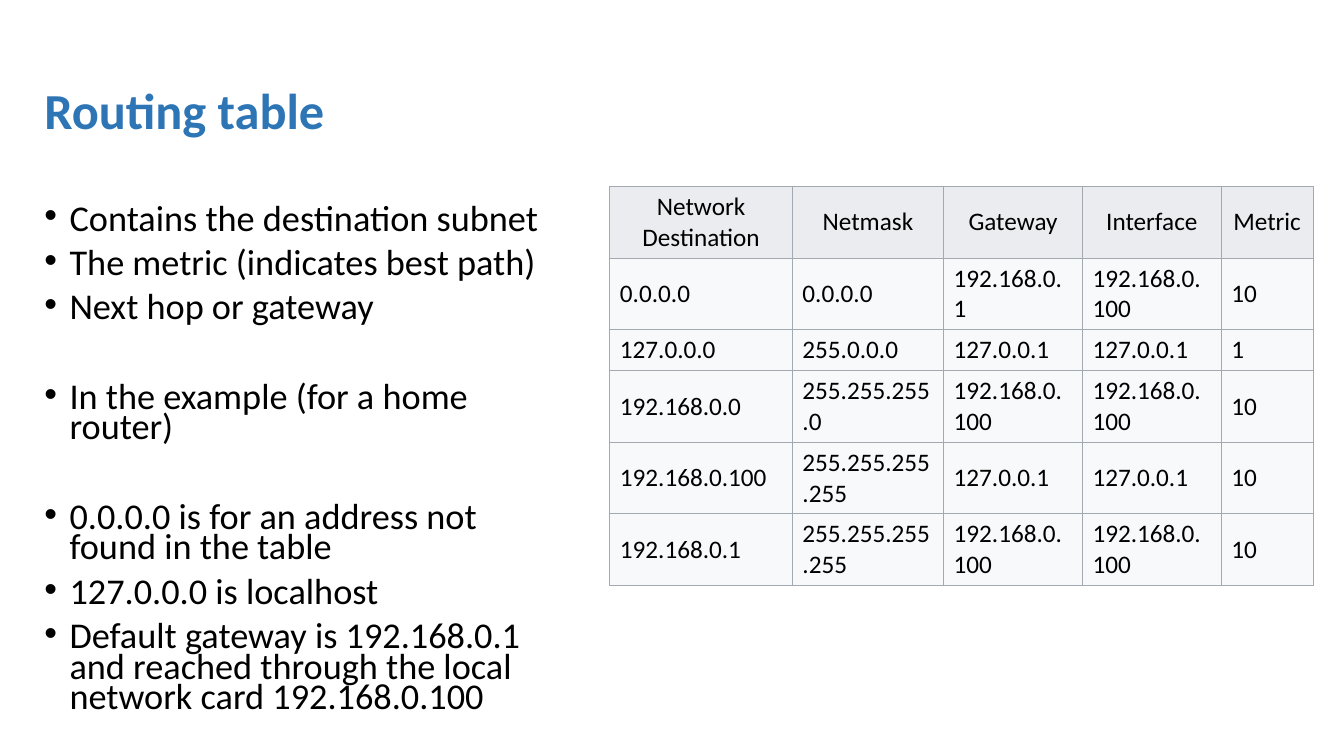
from dataclasses import dataclass

from lxml.etree import SubElement
from pptx import Presentation
from pptx.dml.color import RGBColor as Rgb
from pptx.enum.text import MSO_ANCHOR as Anchor, MSO_AUTO_SIZE as Fit, PP_ALIGN as Align
from pptx.oxml.ns import qn
from pptx.util import Pt

HEX = {
    "title": "2E75B6",
    "text": "000000",
    "head": "EAECF0",
    "cell": "F8F9FA",
    "line": "A2A9B1",
}
FACE = "Calibri"
NEAR, FAR = 10, 42.1  # space before an item, and before a new group


@dataclass
class Item:
    text: str
    gap: float = NEAR


@dataclass
class Col:
    name: str
    width: float
    cells: list[str]


ITEMS = [
    Item("Contains the destination subnet", 0),
    Item("The metric (indicates best path)"),
    Item("Next hop or gateway"),
    Item("In the example (for a home router)", FAR),
    Item("0.0.0.0 is for an address not found in the table", FAR),
    Item("127.0.0.0 is localhost"),
    Item("Default gateway is 192.168.0.1 and reached through "
         "the local network card 192.168.0.100"),
]
LOCAL, CARD, ROUTER = "127.0.0.1", "192.168.0.100", "192.168.0.1"
COLS = [
    Col("Network Destination", 130.4,
        ["0.0.0.0", "127.0.0.0", "192.168.0.0", CARD, ROUTER]),
    Col("Netmask", 108,
        ["0.0.0.0", "255.0.0.0", "255.255.255.0", "255.255.255.255", "255.255.255.255"]),
    Col("Gateway", 99.2, [ROUTER, LOCAL, CARD, LOCAL, CARD]),
    Col("Interface", 99.2, [CARD, LOCAL, CARD, LOCAL, CARD]),
    Col("Metric", 65.5, ["10", "1", "10", "10", "10"]),
]
ROWS = [50.4, 50.4, 29, 50.4, 50.4, 50.4]


def write(para, text: str, *, size: float, color: str = "text", bold: bool = False,
          align=Align.LEFT, lead: float = 1, gap: float = 0) -> None:
    para.alignment = align
    para.line_spacing = lead
    para.space_before = Pt(gap)
    run = para.add_run()
    run.text = text
    font = run.font
    font.name, font.size, font.bold = FACE, Pt(size), bold
    font.color.rgb = Rgb.from_string(HEX[color])


def place(shape, left: float, top: float, width: float, height: float, anchor) -> None:
    shape.left, shape.top = Pt(left), Pt(top)
    shape.width, shape.height = Pt(width), Pt(height)
    frame = shape.text_frame
    frame.word_wrap = True
    frame.auto_size = Fit.NONE
    frame.vertical_anchor = anchor


def bullet(para, indent: float) -> None:
    props = para._p.get_or_add_pPr()
    props.set("marL", str(Pt(indent)))
    props.set("indent", str(-Pt(indent)))
    SubElement(props, qn("a:buFont"), typeface="Arial")
    SubElement(props, qn("a:buChar"), char="•")


def border(cell) -> None:
    """Line all four sides; the lines must come before the cell's fill."""
    props = cell._tc.get_or_add_tcPr()
    for side in ("lnL", "lnR", "lnT", "lnB"):
        line = SubElement(props, qn(f"a:{side}"), w=str(Pt(0.75)))
        fill = SubElement(line, qn("a:solidFill"))
        SubElement(fill, qn("a:srgbClr"), val=HEX["line"])


def draw_list(body) -> None:
    frame = body.text_frame
    for i, item in enumerate(ITEMS):
        para = frame.add_paragraph() if i else frame.paragraphs[0]
        bullet(para, 18)
        write(para, item.text, size=25.9, lead=0.7, gap=item.gap)


def draw_table(slide) -> None:
    width = sum(col.width for col in COLS)
    table = slide.shapes.add_table(len(ROWS), len(COLS), Pt(435.6), Pt(133.2),
                                   Pt(width), Pt(sum(ROWS))).table
    table.horz_banding = False
    for row, height in zip(table.rows, ROWS):
        row.height = Pt(height)
    for x, col in enumerate(COLS):
        table.columns[x].width = Pt(col.width)
        for y, text in enumerate([col.name, *col.cells]):
            cell = table.cell(y, x)
            cell.vertical_anchor = Anchor.MIDDLE
            border(cell)
            cell.fill.solid()
            cell.fill.fore_color.rgb = Rgb.from_string(HEX["cell" if y else "head"])
            write(cell.text_frame.paragraphs[0], text, size=18,
                  align=Align.LEFT if y else Align.CENTER)


def main() -> None:
    deck = Presentation()
    deck.slide_width, deck.slide_height = Pt(960), Pt(540)
    slide = deck.slides.add_slide(deck.slide_layouts[1])
    title, body = slide.placeholders
    place(title, 24.5, 28.8, 913, 104.4, Anchor.MIDDLE)
    write(title.text_frame.paragraphs[0], "Routing table", size=36,
          color="title", bold=True, lead=0.9)
    place(body, 24.5, 144, 390.2, 388.8, Anchor.TOP)
    draw_list(body)
    draw_table(slide)
    deck.save("out.pptx")


if __name__ == "__main__":
    main()
